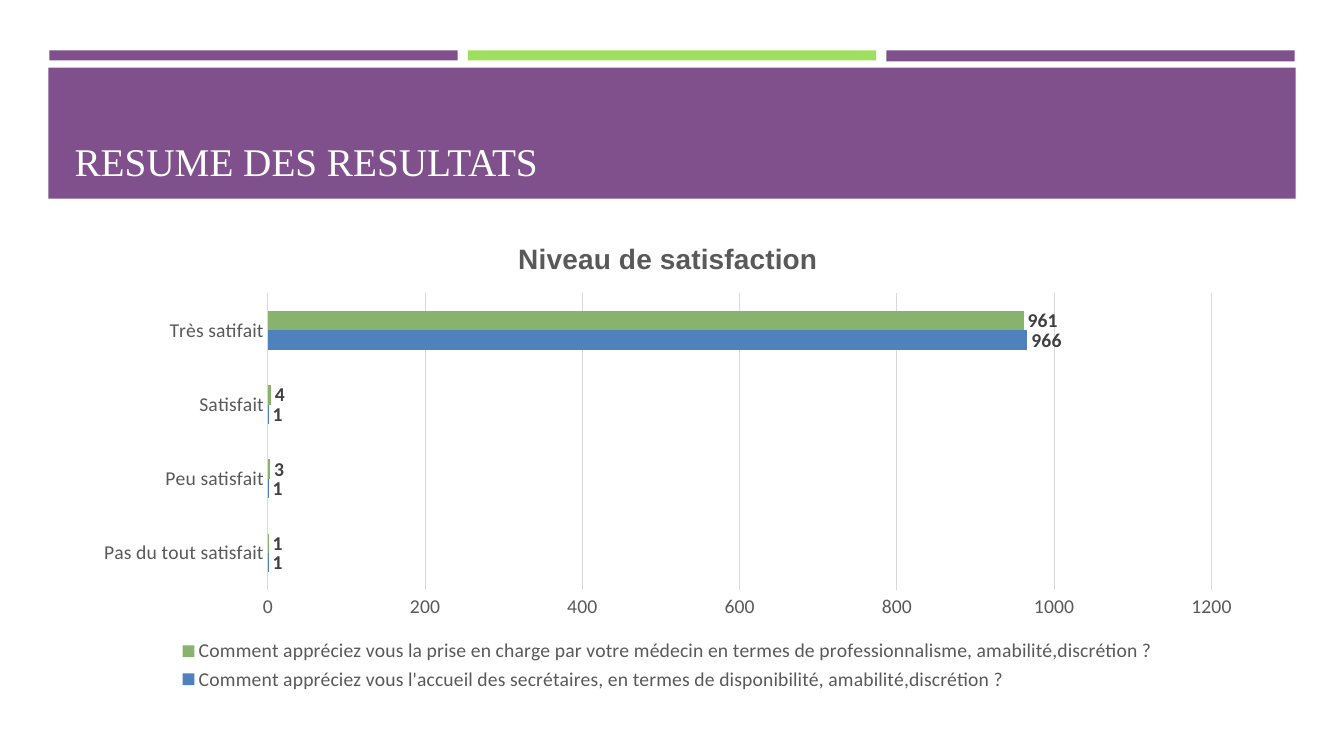
from dataclasses import dataclass

from pptx import Presentation
from pptx.chart.data import CategoryChartData
from pptx.dml.color import RGBColor
from pptx.enum.chart import (XL_CHART_TYPE, XL_LABEL_POSITION,
                             XL_LEGEND_POSITION, XL_TICK_MARK)
from pptx.enum.shapes import MSO_SHAPE
from pptx.enum.text import MSO_ANCHOR, MSO_AUTO_SIZE, PP_ALIGN
from pptx.util import Inches, Pt

RECTANGLE = MSO_SHAPE.RECTANGLE
BAR_CLUSTERED = XL_CHART_TYPE.BAR_CLUSTERED
OUTSIDE_END = XL_LABEL_POSITION.OUTSIDE_END
LEGEND_BOTTOM = XL_LEGEND_POSITION.BOTTOM
NO_TICK = XL_TICK_MARK.NONE

COLORS = {
    "purple": "7F508B",
    "lime": "9FDF5F",
    "white": "FFFFFF",
    "blue": "4F81BD",
    "green": "88B36D",
    "grid": "D9D9D9",
    "text": "595959",
    "label": "404040",
}


@dataclass
class Band:
    left: float
    top: float
    width: float
    height: float
    color: str


@dataclass
class Question:
    wording: str
    answers: tuple[int, ...]
    color: str


BANDS = [
    Band(0.49, 0.5, 4.05, 0.1, "purple"),
    Band(4.64, 0.5, 4.05, 0.1, "lime"),
    Band(8.79, 0.5, 4.05, 0.11, "purple"),
    Band(0.48, 0.67, 12.37, 1.3, "purple"),
]
LEVELS = ["Pas du tout satisfait", "Peu satisfait", "Satisfait", "Très satifait"]
QUESTIONS = [
    Question("Comment appréciez vous l'accueil des secrétaires, en termes de "
             "disponibilité, amabilité,discrétion ?", (1, 1, 1, 966), "blue"),
    Question("Comment appréciez vous la prise en charge par votre médecin en termes "
             "de professionnalisme, amabilité,discrétion ?", (1, 3, 4, 961), "green"),
]


def rgb(name: str) -> RGBColor:
    return RGBColor.from_string(COLORS[name])


def format_font(font, *, size: float = 14, color: str = "text",
                name: str = "Calibri", bold: bool = False) -> None:
    font.size = Pt(size)
    font.name = name
    font.bold = bold
    font.color.rgb = rgb(color)


def write_text(frame, text: str, **text_format) -> None:
    """Fill a text frame with one formatted run."""
    para = frame.paragraphs[0]
    span = para.add_run()
    span.text = text
    format_font(span.font, **text_format)


def draw_band(page, band: Band) -> None:
    box = page.shapes.add_shape(RECTANGLE, Inches(band.left), Inches(band.top),
                                Inches(band.width), Inches(band.height))
    box.shadow.inherit = False
    box.fill.solid()
    box.fill.fore_color.rgb = rgb(band.color)
    box.line.fill.background()


def draw_title(page) -> None:
    title = page.shapes.title
    title.left, title.top = Inches(0.64), Inches(0.77)
    title.width, title.height = Inches(12.06), Inches(1.11)
    frame = title.text_frame
    frame.auto_size = MSO_AUTO_SIZE.NONE
    frame.word_wrap = True
    frame.vertical_anchor = MSO_ANCHOR.BOTTOM
    frame.paragraphs[0].alignment = PP_ALIGN.LEFT
    write_text(frame, "RESUME DES RESULTATS", size=28, color="white",
               name="Times New Roman")
    # Bring the title in front of the bands
    title.element.getparent().append(title.element)


def format_axis(axis) -> None:
    axis.major_tick_mark = NO_TICK
    axis.minor_tick_mark = NO_TICK
    format_font(axis.tick_labels.font)


def draw_chart(page) -> None:
    data = CategoryChartData()
    data.categories = LEVELS
    for question in QUESTIONS:
        data.add_series(question.wording, question.answers)
    chart = page.shapes.add_chart(BAR_CLUSTERED, Inches(0.8), Inches(2.19),
                                  Inches(11.65), Inches(4.71), data).chart
    format_font(chart.font)

    # Title and legend
    chart.has_title = True
    write_text(chart.chart_title.text_frame, "Niveau de satisfaction",
               size=20, name="Arial", bold=True)
    chart.chart_title.include_in_layout = False
    chart.has_legend = True
    chart.legend.position = LEGEND_BOTTOM
    chart.legend.include_in_layout = False
    format_font(chart.legend.font)

    # Axes and grid
    format_axis(chart.category_axis)
    format_axis(chart.value_axis)
    category_line = chart.category_axis.format.line
    chart.value_axis.has_major_gridlines = True
    grid_line = chart.value_axis.major_gridlines.format.line
    for line in (category_line, grid_line):
        line.color.rgb = rgb("grid")
        line.width = Pt(0.75)
    chart.value_axis.format.line.fill.background()

    # Bars and value labels
    plot = chart.plots[0]
    plot.gap_width = 182
    plot.overlap = 0
    plot.vary_by_categories = False
    for series, question in zip(plot.series, QUESTIONS):
        series.format.fill.solid()
        series.format.fill.fore_color.rgb = rgb(question.color)
        labels = series.data_labels
        labels.show_value = True
        labels.position = OUTSIDE_END
        format_font(labels.font, color="label", bold=True)


def main() -> None:
    deck = Presentation()
    deck.slide_width, deck.slide_height = Inches(13.33), Inches(7.5)
    title_only = deck.slide_layouts[5]
    page = deck.slides.add_slide(title_only)
    for band in BANDS:
        draw_band(page, band)
    draw_title(page)
    draw_chart(page)
    deck.save("out.pptx")


if __name__ == "__main__":
    main()
